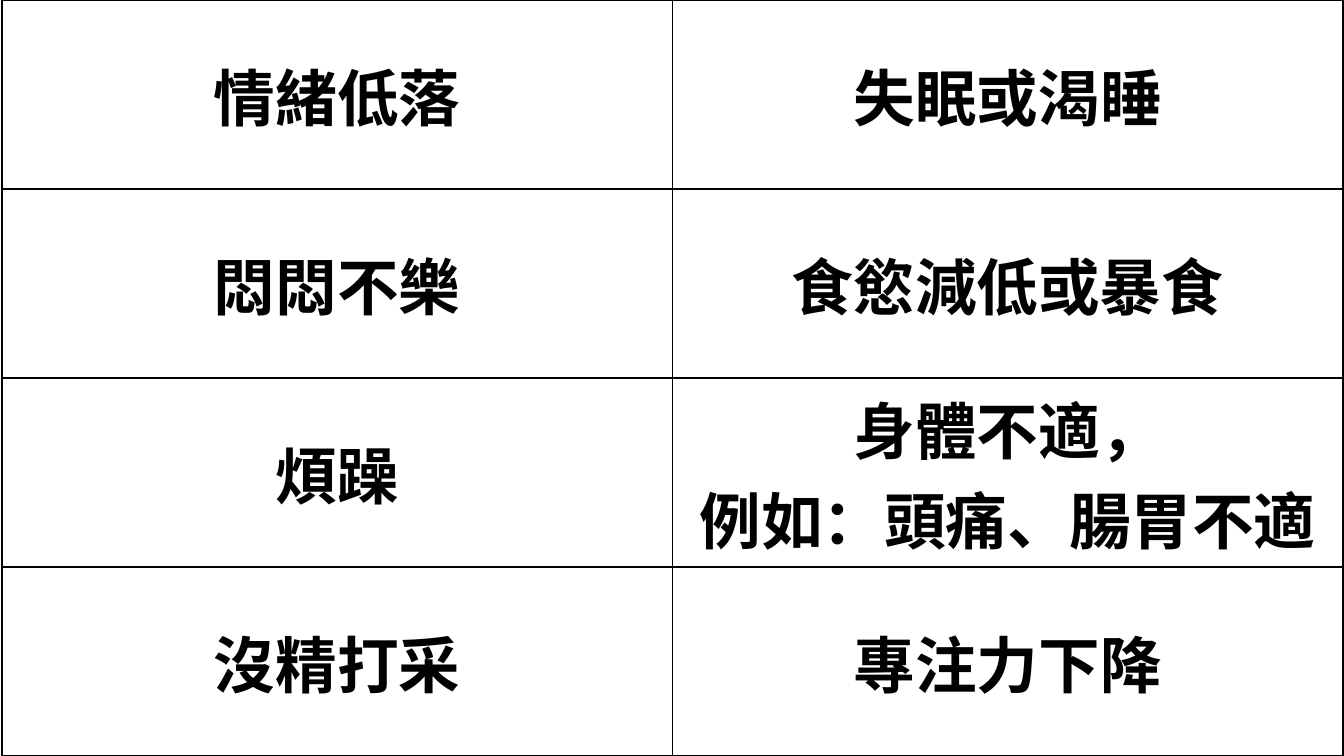
"""Build a slide with a two-column table of mood and body symptoms."""
from dataclasses import dataclass

from lxml.etree import SubElement
from pptx import Presentation
from pptx.dml.color import RGBColor
from pptx.enum.text import MSO_ANCHOR as Anchor, PP_ALIGN as Align
from pptx.oxml.ns import qn
from pptx.util import Inches, Pt

SLIDE_WIDTH, SLIDE_HEIGHT = Inches(13.33), Inches(7.5)
TABLE_LEFT, TABLE_WIDTH = Inches(0.02), Inches(13.3)
FONT = "Noto Sans CJK TC"
BLACK, WHITE = "000000", "FFFFFF"
FONT_FORMAT = {"name": FONT, "size": Pt(44), "bold": True}
PLAIN_STYLE = {"first_row": False, "horz_banding": False}


@dataclass(frozen=True)
class SymptomRow:
    """Hold the mood and body symptoms that share a table row."""

    mood: str
    body: str


SYMPTOMS = (
    SymptomRow("情緒低落", "失眠或渴睡"),
    SymptomRow("悶悶不樂", "食慾減低或暴食"),
    SymptomRow("煩躁", "身體不適，\n例如：頭痛、腸胃不適"),
    SymptomRow("沒精打采", "專注力下降"),
)


def color(value: str) -> RGBColor:
    """Turn a hex string into a colour."""
    return RGBColor.from_string(value)


def set_format(target, values: dict) -> None:
    """Set each named attribute on the target."""
    for name, value in values.items():
        setattr(target, name, value)


def draw_borders(cell, line_color: str, width: int) -> None:
    """Draw a solid line on all four sides of a cell."""
    properties = cell._tc.get_or_add_tcPr()
    for side in ("lnL", "lnR", "lnT", "lnB"):
        line = SubElement(properties, qn(f"a:{side}"), w=str(width))
        fill = SubElement(line, qn("a:solidFill"))
        SubElement(fill, qn("a:srgbClr"), val=line_color)


def write_cell(cell, text: str) -> None:
    """Fill, frame and write one cell."""
    draw_borders(cell, BLACK, Pt(1))
    cell.fill.solid()
    cell.fill.fore_color.rgb = color(WHITE)
    cell.vertical_anchor = Anchor.MIDDLE
    cell.text = text
    for paragraph in cell.text_frame.paragraphs:
        paragraph.alignment = Align.CENTER
        for run in paragraph.runs:
            run.font.color.rgb = color(BLACK)
            set_format(run.font, FONT_FORMAT)
            SubElement(run.font._element, qn("a:ea"), typeface=FONT)


def draw_symptoms(slide, rows: tuple[SymptomRow, ...]) -> None:
    """Draw the symptom table over the whole slide."""
    table = slide.shapes.add_table(
        len(rows), 2, TABLE_LEFT, 0, TABLE_WIDTH, SLIDE_HEIGHT
    ).table
    set_format(table, PLAIN_STYLE)
    for index, row in enumerate(rows):
        for column, text in enumerate((row.mood, row.body)):
            write_cell(table.cell(index, column), text)


def main() -> None:
    """Build and save the presentation."""
    presentation = Presentation()
    set_format(presentation, {"slide_width": SLIDE_WIDTH, "slide_height": SLIDE_HEIGHT})
    slide = presentation.slides.add_slide(presentation.slide_layouts[6])
    draw_symptoms(slide, SYMPTOMS)
    presentation.save("out.pptx")


if __name__ == "__main__":
    main()
